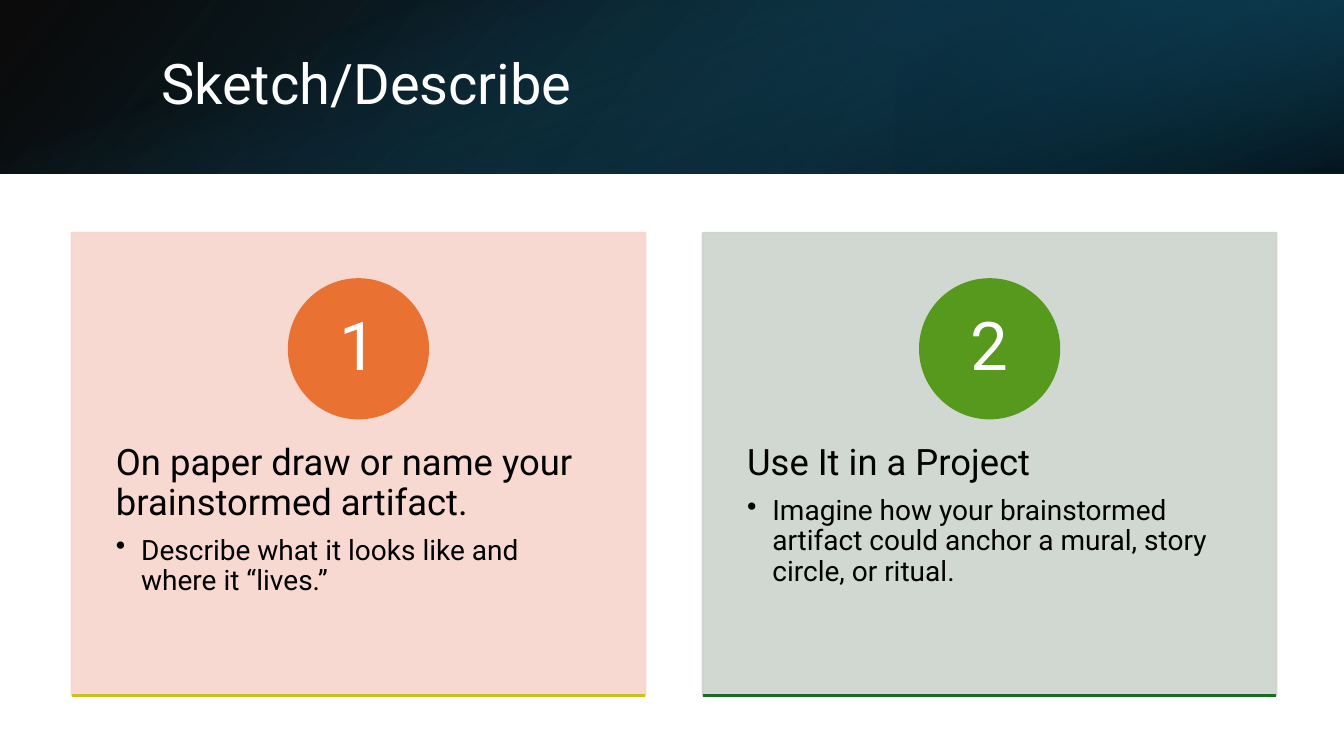
import pptx
import pptx.dml.color
import pptx.enum.shapes
import pptx.enum.text
import pptx.oxml
import pptx.oxml.ns
import pptx.oxml.xmlchemy
import pptx.util
from pptx.util import Inches

RGBColor = pptx.dml.color.RGBColor
Shapes = pptx.enum.shapes.MSO_SHAPE
Align = pptx.enum.text.PP_ALIGN
Anchor = pptx.enum.text.MSO_ANCHOR
qn = pptx.oxml.ns.qn

FONT = "Roboto"
BLACK = RGBColor(0x00, 0x00, 0x00)
WHITE = RGBColor(0xFF, 0xFF, 0xFF)
NAVY = RGBColor(0x10, 0x48, 0x62)
DEEP_TEAL = RGBColor(0x0B, 0x30, 0x41)
TEAL = RGBColor(0x15, 0x60, 0x82)
PINK = RGBColor(0xF7, 0xD5, 0xCE)
SAGE = RGBColor(0xCC, 0xD4, 0xCD)
ORANGE = RGBColor(0xE9, 0x71, 0x32)
GREEN = RGBColor(0x56, 0x99, 0x1D)
YELLOW = RGBColor(0xCB, 0xC1, 0x1E)
DARK_GREEN = RGBColor(0x19, 0x6B, 0x24)

SLIDE_WIDTH, SLIDE_HEIGHT = 13.33, 7.5
BANNER_HEIGHT = 1.72
CARD_LEFT, CARD_TOP, CARD_WIDTH, CARD_HEIGHT = 0.71, 2.31, 5.69, 4.59
CARD_STEP = 6.26
CIRCLE_SIZE, NUMBER_SIZE = 1.38, 0.97
CARDS = [
    ("On paper draw or name your brainstormed artifact.",
     "Describe what it looks like and where it “lives.”",
     PINK, ORANGE, YELLOW),
    ("Use It in a Project",
     "Imagine how your brainstormed artifact could anchor a mural, story circle, or ritual.",
     SAGE, GREEN, DARK_GREEN),
]


def add_alpha(color_parent, opacity):
    """Set the opacity, in percent, of the solid colours below an element."""
    for color in color_parent.iter(qn("a:srgbClr")):
        color.append(pptx.oxml.parse_xml(
            f'<a:alpha {pptx.oxml.ns.nsdecls("a")} val="{opacity * 1000}"/>'))


def add_solid(slide, kind, box, color, opacity=100):
    shape = slide.shapes.add_shape(kind, *map(Inches, box))
    shape.shadow.inherit = False
    shape.fill.solid()
    shape.fill.fore_color.rgb = color
    shape.line.color.rgb = color
    shape.line.width = pptx.util.Pt(1.5)
    if opacity < 100:
        add_alpha(shape._element.spPr, opacity)


def add_gradient(slide, box, stops, angle, rotation=0, flip=False):
    """Add a borderless rectangle; stops are (position, colour, opacity), angle runs clockwise."""
    shape = slide.shapes.add_shape(Shapes.RECTANGLE, *map(Inches, box))
    shape.shadow.inherit = False
    shape.line.fill.background()
    shape.rotation = rotation
    properties = shape._element.spPr
    if flip:
        properties.find(qn("a:xfrm")).set("flipH", "1")
    stop_xml = "".join(
        f'<a:gs pos="{position * 1000}"><a:srgbClr val="{color}">'
        f'<a:alpha val="{opacity * 1000}"/></a:srgbClr></a:gs>'
        for position, color, opacity in stops)
    properties.find(qn("a:prstGeom")).addnext(pptx.oxml.parse_xml(
        f'<a:gradFill {pptx.oxml.ns.nsdecls("a")} rotWithShape="1"><a:gsLst>{stop_xml}</a:gsLst>'
        f'<a:lin ang="{angle * 60000}" scaled="0"/></a:gradFill>'))


def add_rule(slide, left, top, width, color):
    rule = slide.shapes.add_connector(
        pptx.enum.shapes.MSO_CONNECTOR.STRAIGHT,
        Inches(left), Inches(top), Inches(left + width), Inches(top))
    rule.line.color.rgb = color
    rule.line.width = pptx.util.Pt(1.5)
    rule._element.spPr.append(pptx.oxml.xmlchemy.OxmlElement("a:effectLst"))


def add_text_frame(slide, box, insets=(0.1, 0.05), anchor=Anchor.TOP):
    frame = slide.shapes.add_textbox(*map(Inches, box)).text_frame
    frame.word_wrap = True
    frame.vertical_anchor = anchor
    frame.margin_left = frame.margin_right = Inches(insets[0])
    frame.margin_top = frame.margin_bottom = Inches(insets[1])
    return frame


def write(paragraph, text, size, color=BLACK, align=Align.LEFT, space_after=0, bullet=False):
    paragraph.alignment = align
    paragraph.line_spacing = 0.9
    paragraph.space_after = pptx.util.Pt(space_after)
    run = paragraph.add_run()
    run.text = text
    run.font.name = FONT
    run.font.size = pptx.util.Pt(size)
    run.font.color.rgb = color
    if bullet:
        properties = paragraph._p.get_or_add_pPr()
        properties.set("marL", str(Inches(0.25)))
        properties.set("indent", str(-Inches(0.25)))
        mark = pptx.oxml.xmlchemy.OxmlElement("a:buChar")
        mark.set("char", "•")
        properties.append(mark)


def add_banner(slide, title):
    add_gradient(slide, (0, 0, SLIDE_WIDTH, BANNER_HEIGHT),
                 [(0, BLACK, 96), (100, NAVY, 100)], 140, flip=True)
    third = SLIDE_WIDTH / 3
    add_gradient(slide, (2 * third, 0, third, BANNER_HEIGHT),
                 [(19, DEEP_TEAL, 68), (100, TEAL, 79)], 320, rotation=180, flip=True)
    offset = (SLIDE_WIDTH - BANNER_HEIGHT) / 2
    add_gradient(slide, (offset, -offset, BANNER_HEIGHT, SLIDE_WIDTH),
                 [(23, TEAL, 0), (99, BLACK, 74)], 340, rotation=90)
    frame = add_text_frame(slide, (1.5, 0.38, 10.98, 0.96), anchor=Anchor.MIDDLE)
    write(frame.paragraphs[0], title, 40, WHITE)


def add_card(slide, left, number, heading, detail, background, accent, rule_color):
    add_solid(slide, Shapes.RECTANGLE, (left, CARD_TOP, CARD_WIDTH, CARD_HEIGHT), background, 90)
    body = add_text_frame(slide, (left, 4.05, CARD_WIDTH, 2.75), (0.44, 0.36))
    write(body.paragraphs[0], heading, 26, space_after=9.1)
    write(body.add_paragraph(), detail, 20, space_after=3, bullet=True)

    center_x, center_y = left + CARD_WIDTH / 2, 3.46
    circle, label = (
        (center_x - size / 2, center_y - size / 2, size, size)
        for size in (CIRCLE_SIZE, NUMBER_SIZE))
    add_solid(slide, Shapes.OVAL, circle, accent)
    frame = add_text_frame(slide, label, (0.11, 0.01), Anchor.MIDDLE)
    write(frame.paragraphs[0], str(number), 48, WHITE, Align.CENTER)
    add_rule(slide, left, CARD_TOP + CARD_HEIGHT, CARD_WIDTH, rule_color)


def main():
    presentation = pptx.Presentation()
    presentation.slide_width = Inches(SLIDE_WIDTH)
    presentation.slide_height = Inches(SLIDE_HEIGHT)
    slide = presentation.slides.add_slide(presentation.slide_layouts[6])
    add_banner(slide, "Sketch/Describe")
    for index, card in enumerate(CARDS):
        add_card(slide, CARD_LEFT + index * CARD_STEP, index + 1, *card)
    presentation.save("out.pptx")


if __name__ == "__main__":
    main()
